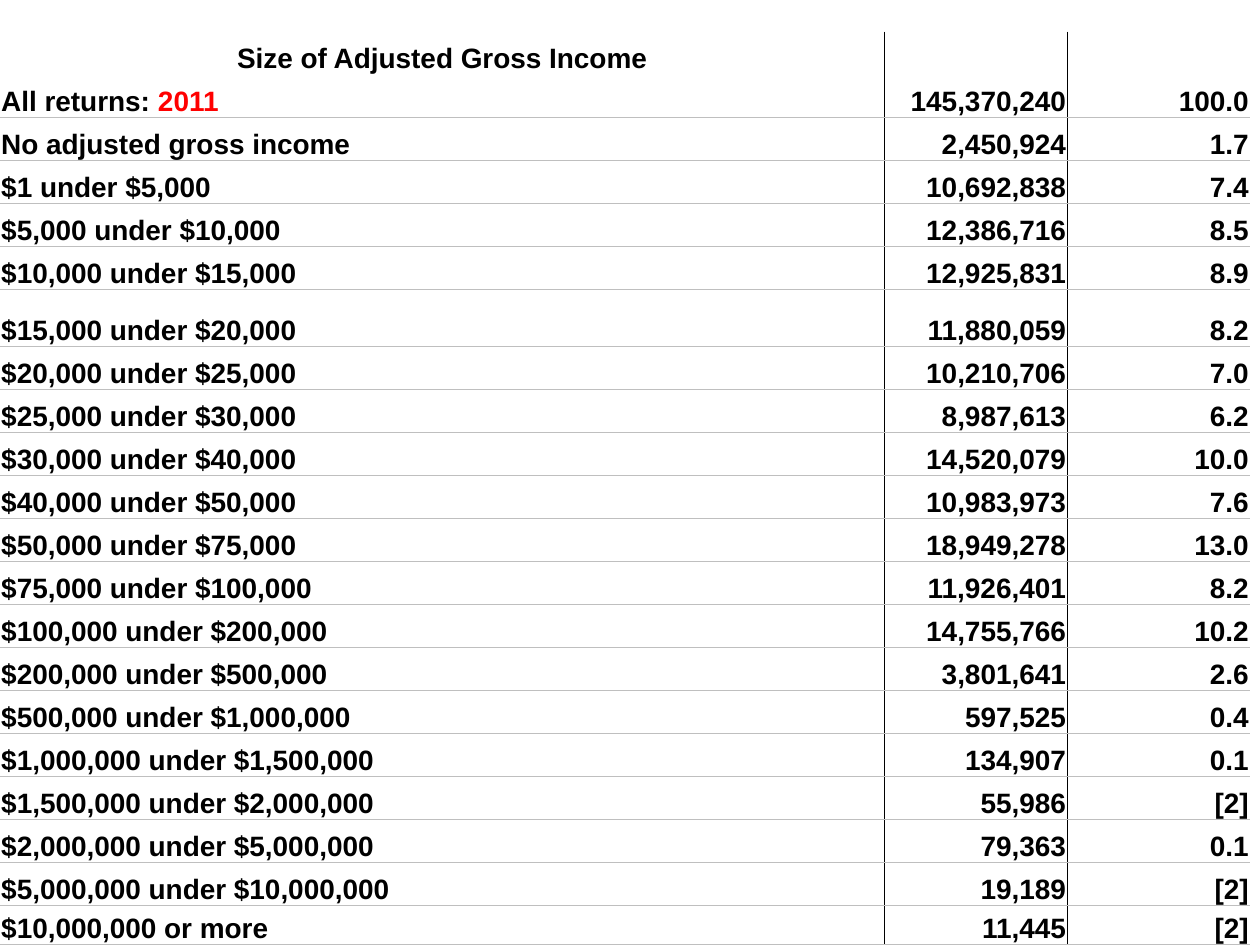
from dataclasses import dataclass

from lxml import etree
from pptx import Presentation
from pptx.dml.color import RGBColor
from pptx.enum.text import MSO_ANCHOR, PP_ALIGN
from pptx.oxml.ns import qn
from pptx.util import Inches, Pt

LEFT, CENTER, RIGHT = PP_ALIGN.LEFT, PP_ALIGN.CENTER, PP_ALIGN.RIGHT
BOTTOM = MSO_ANCHOR.BOTTOM
BLANK_LAYOUT = 6


@dataclass(frozen=True)
class Theme:
    font: str = "Arial"
    size: int = 16
    text: str = "000000"
    accent: str = "FF0000"
    background: str = "FFFFFF"
    column_rule: str = "000000"
    row_rule: str = "BFBFBF"
    rule_width: float = 0.5


HEADING = "Size of Adjusted Gross Income"
TOTAL_LABEL, TAX_YEAR = "All returns: ", "2011"
TOTAL = ("145,370,240", "100.0")
INCOME_BRACKETS = [
    ("No adjusted gross income", "2,450,924", "1.7"),
    ("$1 under $5,000", "10,692,838", "7.4"),
    ("$5,000 under $10,000", "12,386,716", "8.5"),
    ("$10,000 under $15,000", "12,925,831", "8.9"),
    ("$15,000 under $20,000", "11,880,059", "8.2"),
    ("$20,000 under $25,000", "10,210,706", "7.0"),
    ("$25,000 under $30,000", "8,987,613", "6.2"),
    ("$30,000 under $40,000", "14,520,079", "10.0"),
    ("$40,000 under $50,000", "10,983,973", "7.6"),
    ("$50,000 under $75,000", "18,949,278", "13.0"),
    ("$75,000 under $100,000", "11,926,401", "8.2"),
    ("$100,000 under $200,000", "14,755,766", "10.2"),
    ("$200,000 under $500,000", "3,801,641", "2.6"),
    ("$500,000 under $1,000,000", "597,525", "0.4"),
    ("$1,000,000 under $1,500,000", "134,907", "0.1"),
    ("$1,500,000 under $2,000,000", "55,986", "[2]"),
    ("$2,000,000 under $5,000,000", "79,363", "0.1"),
    ("$5,000,000 under $10,000,000", "19,189", "[2]"),
    ("$10,000,000 or more", "11,445", "[2]"),
]
COLUMN_WIDTHS = (7.02, 1.45, 1.45)
TABLE_TOP, TABLE_HEIGHT = 0.25, 7.25
TALL_ROW, TALL_HEIGHT = 6, 0.45
LAST_HEIGHT = 0.31


class SlideBuilder:
    def __init__(self, slide, theme):
        self.slide = slide
        self.theme = theme

    def background(self):
        fill = self.slide.background.fill
        fill.solid()
        fill.fore_color.rgb = RGBColor.from_string(self.theme.background)

    def table(self, left, top, widths, heights):
        frame = self.slide.shapes.add_table(
            len(heights), len(widths), Inches(left), Inches(top),
            Inches(sum(widths)), Inches(sum(heights)))
        table = frame.table
        table.first_row = table.horz_banding = False
        for column, width in zip(table.columns, widths):
            column.width = Inches(width)
        for row, height in zip(table.rows, heights):
            row.height = Inches(height)
        return table

    def cell(self, cell, runs, align, rules):
        """Fill a cell with (text, colour) runs; rules maps each ruled side to a colour."""
        cell.margin_left = cell.margin_right = cell.margin_top = Inches(0.01)
        cell.margin_bottom = 0
        cell.vertical_anchor = BOTTOM
        paragraph = cell.text_frame.paragraphs[0]
        paragraph.alignment = align
        for text, colour in runs:
            run = paragraph.add_run()
            run.text = text
            run.font.name = self.theme.font
            run.font.size = Pt(self.theme.size)
            run.font.bold = True
            run.font.color.rgb = RGBColor.from_string(colour)
        for side in "LRTB":
            self.border(cell, side, rules.get(side))
        cell.fill.background()

    def border(self, cell, side, colour):
        properties = cell._tc.get_or_add_tcPr()
        line = etree.SubElement(properties, qn(f"a:ln{side}"))
        if colour is None:
            etree.SubElement(line, qn("a:noFill"))
            return
        line.set("w", str(Pt(self.theme.rule_width)))
        fill = etree.SubElement(line, qn("a:solidFill"))
        etree.SubElement(fill, qn("a:srgbClr"), val=colour)


def cell_rules(row, column, theme):
    """Rule between columns everywhere, and below every row but the heading."""
    rules = {}
    if column > 0:
        rules["L"] = theme.column_rule
    if column < len(COLUMN_WIDTHS) - 1:
        rules["R"] = theme.column_rule
    if row > 1:
        rules["T"] = theme.row_rule
    if row > 0:
        rules["B"] = theme.row_rule
    return rules


def row_heights(count):
    regular = (TABLE_HEIGHT - TALL_HEIGHT - LAST_HEIGHT) / (count - 2)
    heights = [regular] * count
    heights[TALL_ROW] = TALL_HEIGHT
    heights[-1] = LAST_HEIGHT
    return heights


def main():
    theme = Theme()
    presentation = Presentation()
    presentation.slide_width = Inches(10)
    presentation.slide_height = Inches(7.5)
    slide = presentation.slides.add_slide(presentation.slide_layouts[BLANK_LAYOUT])
    builder = SlideBuilder(slide, theme)
    builder.background()

    def plain(text):
        return [(text, theme.text)]

    rows = [
        [plain(HEADING), [], []],
        [plain(TOTAL_LABEL) + [(TAX_YEAR, theme.accent)], *map(plain, TOTAL)],
        *([plain(text) for text in bracket] for bracket in INCOME_BRACKETS),
    ]
    income_table = builder.table(0, TABLE_TOP, COLUMN_WIDTHS, row_heights(len(rows)))
    for r, row in enumerate(rows):
        for c, runs in enumerate(row):
            label_align = CENTER if r == 0 else LEFT
            builder.cell(income_table.cell(r, c), runs,
                         RIGHT if c else label_align, cell_rules(r, c, theme))

    presentation.save("out.pptx")


if __name__ == "__main__":
    main()
